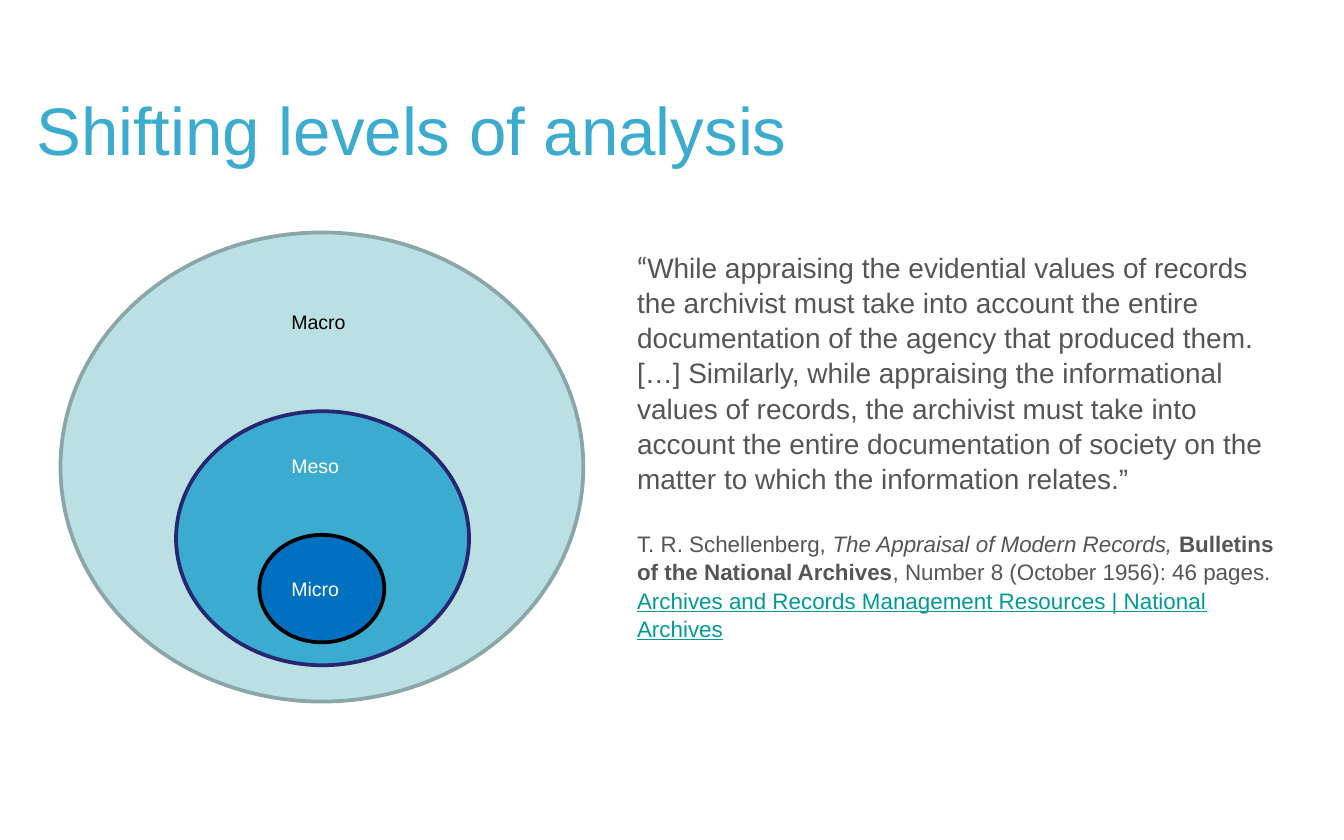
"""Build the slide on shifting levels of analysis, with nested ellipses and a quotation."""
from pptx import Presentation
from pptx.dml.color import RGBColor
from pptx.enum.shapes import MSO_SHAPE
from pptx.enum.text import MSO_ANCHOR, MSO_AUTO_SIZE, PP_ALIGN
from pptx.oxml.ns import qn
from pptx.util import Inches, Pt
from lxml import etree

ELLIPSE = MSO_SHAPE.OVAL
TOP = MSO_ANCHOR.TOP
LEFT = PP_ALIGN.LEFT
NO_AUTOFIT = MSO_AUTO_SIZE.NONE

BLACK = RGBColor(0x00, 0x00, 0x00)
WHITE = RGBColor(0xFF, 0xFF, 0xFF)
SKY = RGBColor(0x3B, 0xAC, 0xCF)
PALE = RGBColor(0xBB, 0xE0, 0xE3)
PALE_EDGE = RGBColor(0x8A, 0xA6, 0xA8)
NAVY = RGBColor(0x26, 0x26, 0x71)
BLUE = RGBColor(0x00, 0x70, 0xC0)
GRAY = RGBColor(0x55, 0x55, 0x55)
TEAL = RGBColor(0x00, 0x99, 0x99)


def place(shape, left, top, width, height):
    shape.left, shape.top = Inches(left), Inches(top)
    shape.width, shape.height = Inches(width), Inches(height)
    shape.text_frame.word_wrap = True
    shape.text_frame.auto_size = NO_AUTOFIT
    shape.text_frame.vertical_anchor = TOP


def format_font(font, size, color, name="Arial"):
    font.name = name
    font.size = Pt(size)
    font.color.rgb = color


presentation = Presentation()
presentation.slide_width = Inches(10)
presentation.slide_height = Inches(6.25)
slide = presentation.slides.add_slide(presentation.slide_layouts[1])

title = slide.shapes.title
place(title, 0.17, 0.61, 9.61, 0.59)
title.text_frame.text = "Shifting levels of analysis"
title_paragraph = title.text_frame.paragraphs[0]
title_paragraph.alignment = LEFT
format_font(title_paragraph.runs[0].font, 36, SKY)

quote_parts = [
    "“",
    "While appraising the evidential values of records the archivist must take into account "
    "the entire documentation of the agency that produced them. […] Similarly, while "
    "appraising the informational values of records, the archivist must take into account "
    "the entire documentation of society on the matter to which the information relates.”",
]
citation_parts = [
    "T. R. Schellenberg,\u00a0",
    "The Appraisal of Modern Records,\u00a0",
    "Bulletins of the National Archives",
    ", Number 8 (October 1956): 46 pages. ",
    "Archives and Records Management Resources | National Archives",
]

body = slide.placeholders[1]
place(body, 4.64, 1.8, 5.01, 3.84)
quote = body.text_frame.paragraphs[0]
citation = body.text_frame.add_paragraph()
for paragraph, parts, size, space in (
    (quote, quote_parts, 15, 0),
    (citation, citation_parts, 12, 18),
):
    paragraph.line_spacing = 1.05
    paragraph.space_before = Pt(space)
    properties = paragraph._p.get_or_add_pPr()
    properties.set("marL", "0")
    properties.set("indent", "0")
    etree.SubElement(properties, qn("a:buNone"))
    for part in parts:
        run = paragraph.add_run()
        run.text = part
        format_font(run.font, size, GRAY)

quote.runs[0].font.name = "Lato"
citation.runs[1].font.italic = True
citation.runs[2].font.bold = True
citation.runs[4].font.underline = True
citation.runs[4].font.color.rgb = TEAL

levels = [
    (0.45, 1.73, 3.89, 3.49, PALE, PALE_EDGE),
    (1.31, 3.06, 2.18, 1.89, SKY, NAVY),
    (1.93, 3.98, 0.93, 0.8, BLUE, BLACK),
]
for left, top, width, height, fill, edge in levels:
    ellipse = slide.shapes.add_shape(
        ELLIPSE, Inches(left), Inches(top), Inches(width), Inches(height)
    )
    ellipse.shadow.inherit = False
    ellipse.fill.solid()
    ellipse.fill.fore_color.rgb = fill
    ellipse.line.color.rgb = edge
    ellipse.line.width = Pt(2)

labels = [
    ("Macro", 2.26, 1.01, BLACK),
    ("Meso", 3.33, 0.85, WHITE),
    ("Micro", 4.24, 0.65, WHITE),
]
for text, top, width, color in labels:
    label = slide.shapes.add_textbox(0, 0, 0, 0)
    place(label, 2.07, top, width, 0.28)
    label.text_frame.text = text
    format_font(label.text_frame.paragraphs[0].runs[0].font, 10.5, color)

presentation.save("out.pptx")
